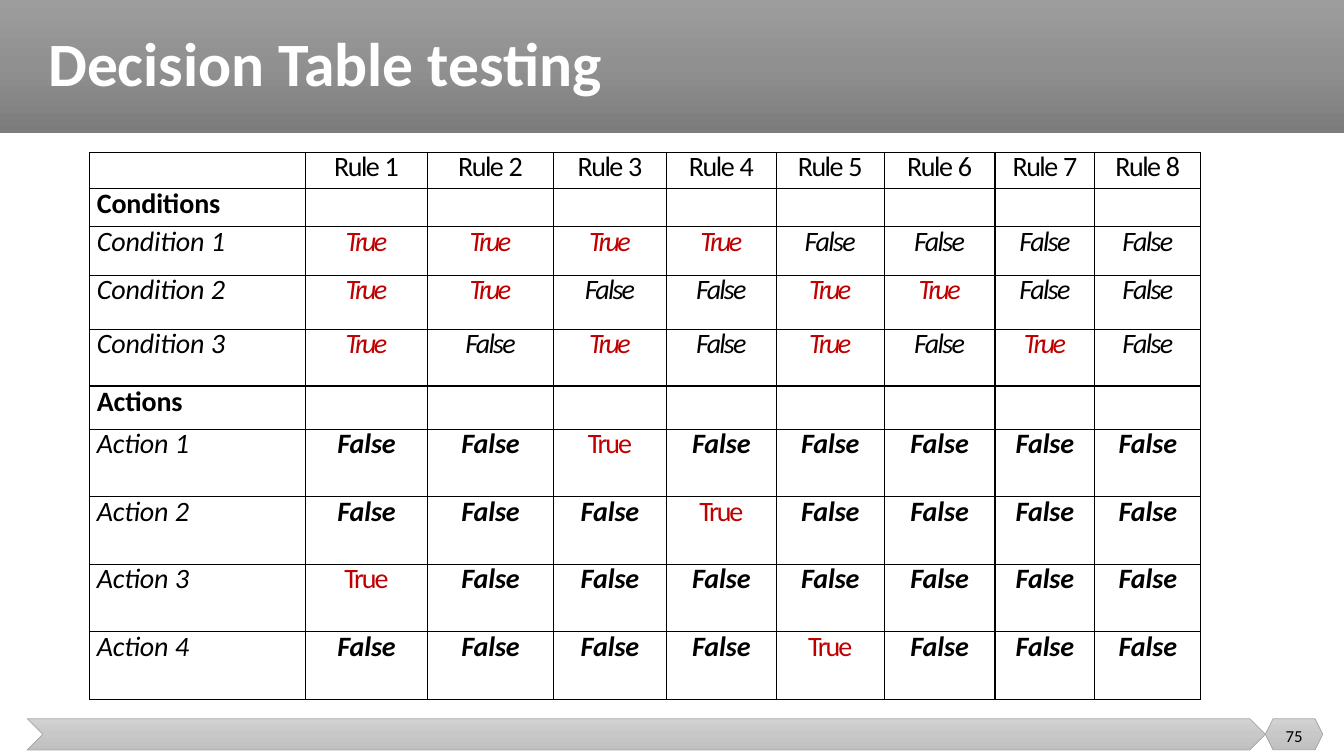
from dataclasses import dataclass

import pptx
import pptx.dml.color
import pptx.enum.shapes
import pptx.enum.text
import pptx.oxml
import pptx.oxml.ns
import pptx.util

Inches = pptx.util.Inches
Pt = pptx.util.Pt
Shape = pptx.enum.shapes.MSO_SHAPE
Align = pptx.enum.text.PP_ALIGN
Anchor = pptx.enum.text.MSO_ANCHOR

FONT = "Calibri"
COLORS = {
    "text": "000000",
    "true": "C00000",
    "title": "FFFFFF",
    "border": "000000",
    "footer_line": "A5A5A5",
}
HEADER_GRADIENT = ("9D9D9D", "909090", "7C7C7C")
FOOTER_GRADIENT = ("D2D2D2", "C8C8C8", "C0C0C0")
COLUMN_WIDTHS = (2.14, 1.21, 1.25, 1.12, 1.09, 1.07, 1.1, 0.99, 1.05)
RULE_COUNT = len(COLUMN_WIDTHS) - 1


@dataclass(frozen=True)
class Band:
    kind: int
    left: float
    top: float
    width: float
    height: float
    gradient: tuple[str, str, str]
    line: str | None = None


@dataclass(frozen=True)
class Span:
    text: str
    size: float = 20
    color: str = "text"
    bold: bool = False
    italic: bool = False
    spacing: float = 0


@dataclass(frozen=True)
class DecisionRow:
    """One row below the rule names; values holds T or F for each rule."""
    label: str
    height: float
    number: str = ""
    values: str = ""
    line_spacing: float = 22.8


BANDS = (
    Band(Shape.RECTANGLE, 0, 0, 13.33, 1.32, HEADER_GRADIENT),
    Band(Shape.CHEVRON, 0.27, 7.13, 12.28, 0.31, FOOTER_GRADIENT, "footer_line"),
    Band(Shape.HEXAGON, 12.55, 7.13, 0.57, 0.31, FOOTER_GRADIENT, "footer_line"),
)
HEADING_HEIGHT = 0.36
ROWS = (
    DecisionRow("Conditions", 0.38, line_spacing=23.4),
    DecisionRow("Condition", 0.48, "1", "TTTTFFFF"),
    DecisionRow("Condition", 0.54, "2", "TTFFTTFF"),
    DecisionRow("Condition", 0.56, "3", "TFTFTFTF"),
    DecisionRow("Actions", 0.43, line_spacing=23.4),
    DecisionRow("Action", 0.67, "1", "FFTFFFFF"),
    DecisionRow("Action", 0.67, "2", "FFFTFFFF"),
    DecisionRow("Action", 0.67, "3", "TFFFFFFF", 22.9),
    DecisionRow("Action", 0.67, "4", "FFFFTFFF", 22.9),
)


def rgb(name: str) -> pptx.dml.color.RGBColor:
    return pptx.dml.color.RGBColor.from_string(COLORS[name])


def add_spans(para, *spans: Span) -> None:
    for span in spans:
        run = para.add_run()
        run.text = span.text
        run.font.name = FONT
        run.font.size = Pt(span.size)
        run.font.bold = span.bold
        run.font.italic = span.italic
        run.font.color.rgb = rgb(span.color)
        if span.spacing:
            run.font._element.set("spc", str(round(span.spacing * 100)))


def add_band(page, band: Band) -> None:
    shape = page.shapes.add_shape(
        band.kind, Inches(band.left), Inches(band.top), Inches(band.width), Inches(band.height))
    shape.shadow.inherit = False
    shape.fill.gradient()
    shape.fill.gradient_angle = 270
    stops = shape._element.spPr.find(".//" + pptx.oxml.ns.qn("a:gsLst"))
    stops.clear()
    for position, color in zip((0, 50000, 100000), band.gradient):
        stops.append(pptx.oxml.parse_xml(
            f'<a:gs {pptx.oxml.ns.nsdecls("a")} pos="{position}"><a:srgbClr val="{color}"/></a:gs>'))
    if band.line:
        shape.line.color.rgb = rgb(band.line)
        shape.line.width = Pt(0.5)
    else:
        shape.line.fill.background()


def add_text(page, left: float, top: float, width: float, height: float,
             span: Span, align: int, line_spacing: float = 1) -> None:
    box = page.shapes.add_textbox(Inches(left), Inches(top), Inches(width), Inches(height))
    frame = box.text_frame
    frame.word_wrap = True
    frame.vertical_anchor = Anchor.MIDDLE
    para = frame.paragraphs[0]
    para.alignment = align
    para.line_spacing = line_spacing
    add_spans(para, span)


def clear_cell(cell) -> None:
    """Give a cell thin borders, no fill and no margins."""
    cell.margin_left = cell.margin_right = cell.margin_top = cell.margin_bottom = 0
    properties = cell._tc.get_or_add_tcPr()
    for side in "LRTB":
        properties.append(pptx.oxml.parse_xml(
            f'<a:ln{side} {pptx.oxml.ns.nsdecls("a")} w="{Pt(1)}"><a:solidFill>'
            f'<a:srgbClr val="{COLORS["border"]}"/></a:solidFill></a:ln{side}>'))
    cell.fill.background()


def fill_cell(cell, line_spacing: float, *spans: Span, indent: float = 0) -> None:
    """Write a cell: indented text starts at the left, other text is centred."""
    para = cell.text_frame.paragraphs[0]
    para.line_spacing = Pt(line_spacing)
    para.alignment = Align.LEFT if indent else Align.CENTER
    if indent:
        para._p.get_or_add_pPr().set("marL", str(Inches(indent)))
    add_spans(para, *spans)


def value_span(row: DecisionRow, column: int) -> Span:
    is_true = row.values[column - 1] == "T"
    if row.label == "Condition":
        tightening = 0 if column <= 4 else 0.1
        if is_true:
            return Span("True", color="true", italic=True, spacing=-1.9 + tightening)
        return Span("False", italic=True, spacing=-1.3 + tightening)
    if is_true:
        return Span("True", color="true", spacing=-1.5)
    return Span("False", bold=True, italic=True, spacing=-0.1)


def add_decision_table(page) -> None:
    heights = (HEADING_HEIGHT, *(row.height for row in ROWS))
    table = page.shapes.add_table(
        len(heights), len(COLUMN_WIDTHS), Inches(0.89), Inches(1.51),
        Inches(sum(COLUMN_WIDTHS)), Inches(sum(heights))).table
    table.first_row = table.horz_banding = False
    for column, width in zip(table.columns, COLUMN_WIDTHS):
        column.width = Inches(width)
    for table_row, height in zip(table.rows, heights):
        table_row.height = Inches(height)
    for cell in table.iter_cells():
        clear_cell(cell)

    for rule in range(1, RULE_COUNT + 1):
        fill_cell(table.cell(0, rule), 22.8,
                  Span("Rule ", spacing=-1.1), Span(str(rule), spacing=-0.3))
    for index, row in enumerate(ROWS, start=1):
        if row.values:
            label = (Span(row.label + " ", italic=True, spacing=-0.1),
                     Span(row.number, italic=True))
        else:
            label = (Span(row.label, bold=True, spacing=-0.1),)
        fill_cell(table.cell(index, 0), row.line_spacing, *label, indent=0.07)
        for column in range(1, len(row.values) + 1):
            fill_cell(table.cell(index, column), row.line_spacing, value_span(row, column))


def main() -> None:
    deck = pptx.Presentation()
    deck.slide_width = Inches(13.33)
    deck.slide_height = Inches(7.5)
    page = deck.slides.add_slide(deck.slide_layouts[6])
    for band in BANDS:
        add_band(page, band)
    add_text(page, 0.38, 0, 12.74, 1.32,
             Span("Decision Table testing", 44, "title", bold=True), Align.LEFT, 0.9)
    add_text(page, 12.55, 7.1, 0.57, 0.4, Span("75", 12), Align.CENTER)
    add_decision_table(page)
    deck.save("out.pptx")


if __name__ == "__main__":
    main()
